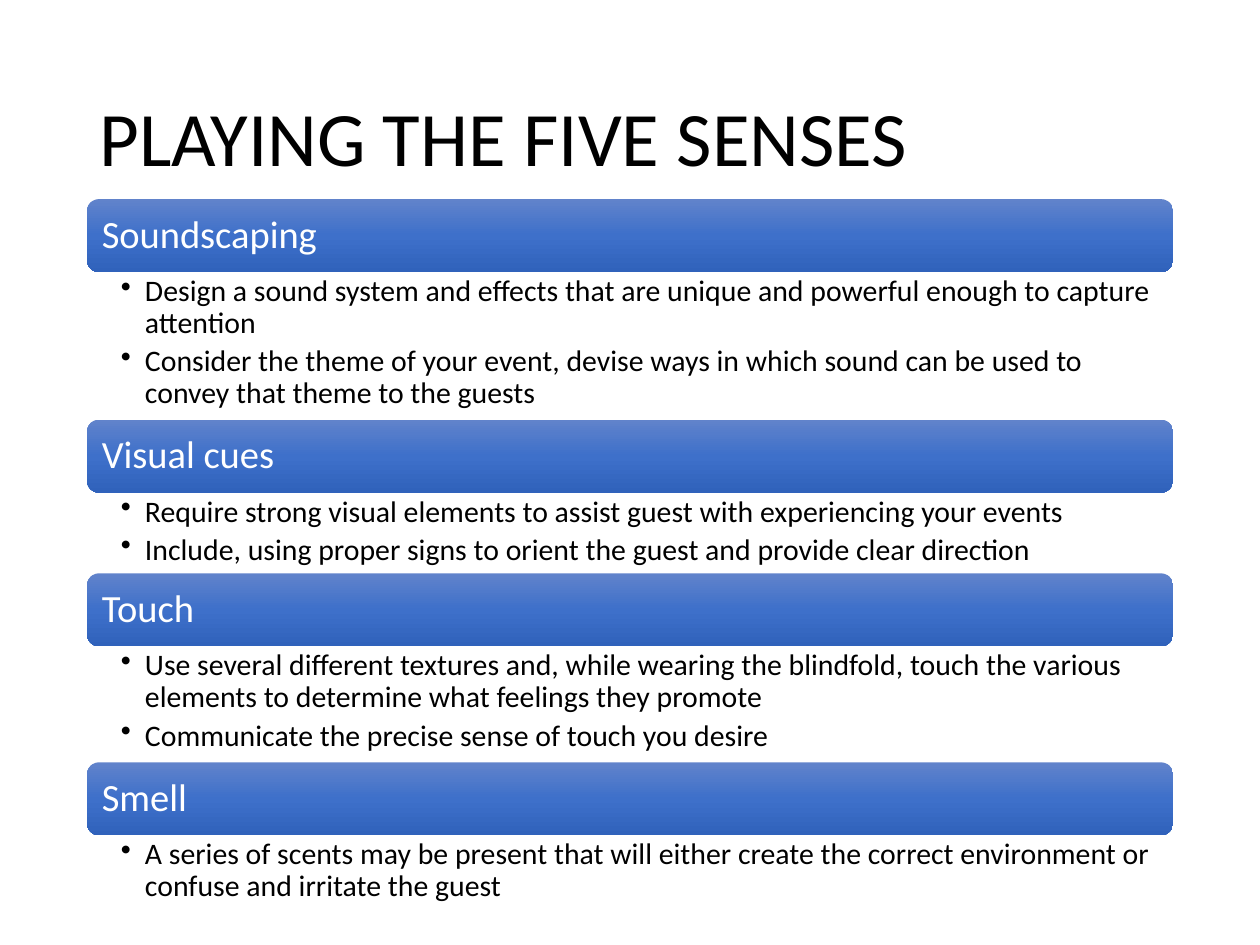
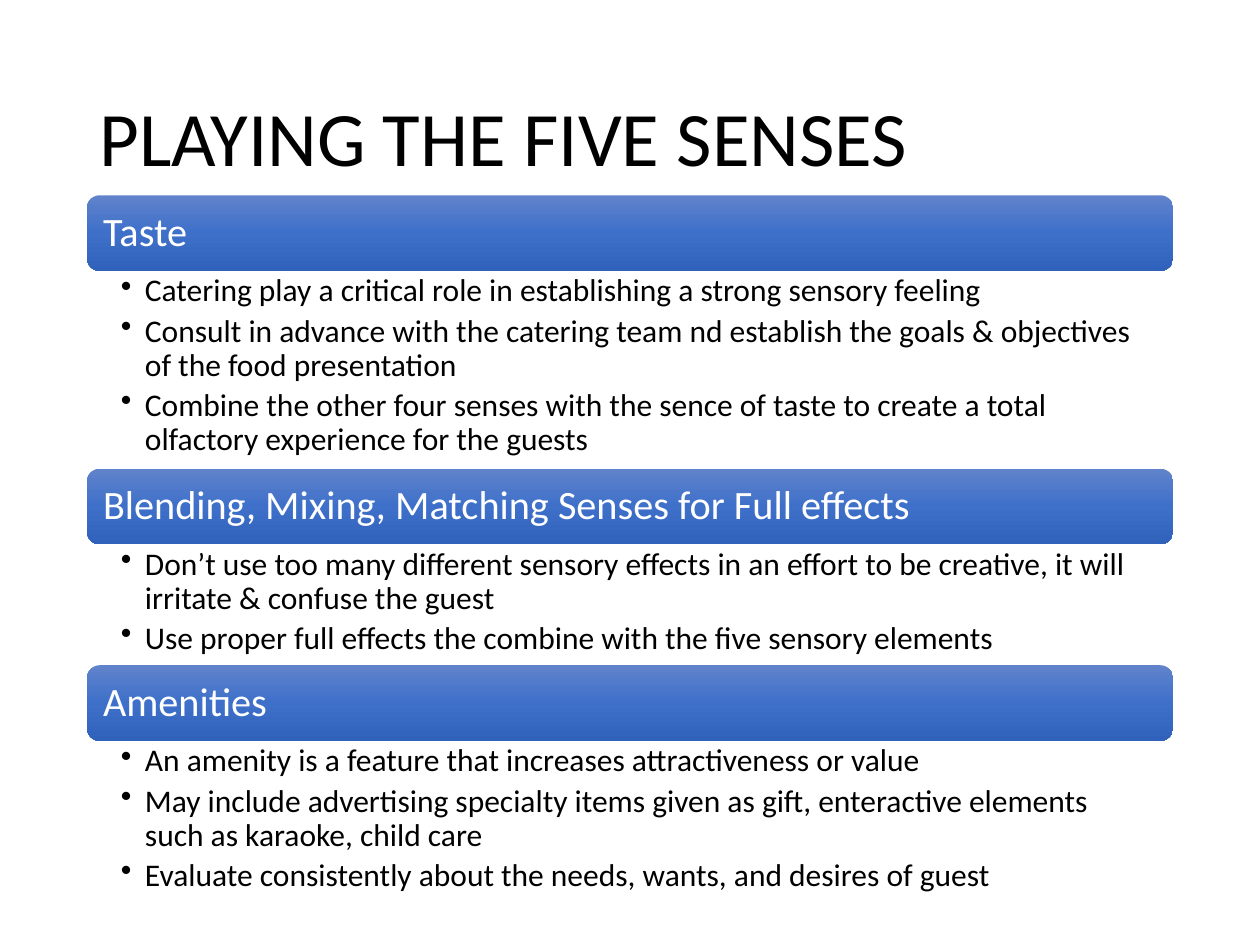
import copy

import pptx
import pptx.dml.color
import pptx.enum.shapes
import pptx.enum.text
import pptx.oxml
import pptx.oxml.ns
import pptx.util

Inches = pptx.util.Inches
Pt = pptx.util.Pt
RGBColor = pptx.dml.color.RGBColor
qn = pptx.oxml.ns.qn

FONT = "Calibri"
BLACK = RGBColor(0x00, 0x00, 0x00)
WHITE = RGBColor(0xFF, 0xFF, 0xFF)
BAND_STOPS = [
    (0.0, RGBColor(0x61, 0x83, 0xCB)),
    (0.5, RGBColor(0x3E, 0x70, 0xCA)),
    (1.0, RGBColor(0x30, 0x62, 0xBB)),
]
LEFT, WIDTH = 0.69, 8.62
BULLET_INDENT = 0.19
TITLE = "PLAYING THE FIVE SENSES"

# Each section: heading, height of its bullet area, bullets
SENSES = [
    ("Soundscaping", 1.17, [
        "Design a sound system and effects that are unique and powerful enough to capture attention",
        "Consider the theme of your event, devise ways in which sound can be used to convey that "
        "theme to the guests",
    ]),
    ("Visual cues", 0.64, [
        "Require strong visual elements to assist guest with experiencing your events",
        "Include, using proper signs to orient the guest and provide clear direction",
    ]),
    ("Touch", 0.92, [
        "Use several different textures and, while wearing the blindfold, touch the various "
        "elements to determine what feelings they promote",
        "Communicate the precise sense of touch you desire",
    ]),
    ("Smell", 0.59, [
        "A series of scents may be present that will either create the correct environment or "
        "confuse and irritate the guest",
    ]),
]
TASTE_AND_EFFECTS = [
    ("Taste", 1.57, [
        "Catering play a critical role in establishing a strong sensory feeling",
        "Consult in advance with the catering team nd establish the goals & objectives of the "
        "food presentation",
        "Combine the other four senses with the sence of taste to create a total olfactory "
        "experience for the guests",
    ]),
    ("Blending, Mixing, Matching Senses for Full effects", 0.96, [
        "Don’t use too many different sensory effects in an effort to be creative, it will "
        "irritate & confuse the guest",
        "Use proper full effects the combine with the five sensory elements",
    ]),
    ("Amenities", 1.3, [
        "An amenity is a feature that increases attractiveness or value",
        "May include advertising specialty items given as gift, enteractive elements such as "
        "karaoke, child care",
        "Evaluate consistently about the needs, wants, and desires of guest",
    ]),
]


def set_frame(frame, anchor, left, top, right, bottom):
    frame.word_wrap = True
    frame.vertical_anchor = anchor
    frame.margin_left, frame.margin_top = Inches(left), Inches(top)
    frame.margin_right, frame.margin_bottom = Inches(right), Inches(bottom)


def write(paragraph, text, size, color):
    paragraph.alignment = pptx.enum.text.PP_ALIGN.LEFT
    paragraph.line_spacing = 0.9
    run = paragraph.add_run()
    run.text = text
    run.font.name = FONT
    run.font.size = Pt(size)
    run.font.color.rgb = color


def add_title(slide):
    title = slide.shapes.title
    title.left, title.top = Inches(LEFT), Inches(0.4)
    title.width, title.height = Inches(WIDTH), Inches(1.45)
    title.text_frame.vertical_anchor = pptx.enum.text.MSO_ANCHOR.MIDDLE
    write(title.text_frame.paragraphs[0], TITLE, 44, BLACK)


def fill_band(band):
    band.fill.gradient()
    band.fill.gradient_angle = 270  # counter-clockwise, so top to bottom
    stop_list = band.fill.gradient_stops
    first_stop = band._element.spPr.find(".//" + qn("a:gs"))
    first_stop.addnext(copy.deepcopy(first_stop))
    stop_list = band.fill.gradient_stops
    for stop, (position, color) in zip(stop_list, BAND_STOPS):
        stop.position = position
        stop.color.rgb = color


def add_band(slide, top, height, heading, size, inset):
    band = slide.shapes.add_shape(
        pptx.enum.shapes.MSO_SHAPE.ROUNDED_RECTANGLE,
        Inches(LEFT), Inches(top), Inches(WIDTH), Inches(height))
    band.shadow.inherit = False
    band.line.fill.background()
    fill_band(band)
    set_frame(band.text_frame, pptx.enum.text.MSO_ANCHOR.MIDDLE, inset, inset, inset, inset)
    write(band.text_frame.paragraphs[0], heading, size, WHITE)


def add_bullets(slide, top, height, bullets, size):
    area = slide.shapes.add_textbox(Inches(LEFT), Inches(top), Inches(WIDTH), Inches(height))
    frame = area.text_frame
    set_frame(frame, pptx.enum.text.MSO_ANCHOR.TOP, 0.27, 0.03, size / 100, 0.03)
    for index, bullet in enumerate(bullets):
        paragraph = frame.add_paragraph() if index else frame.paragraphs[0]
        write(paragraph, bullet, size, BLACK)
        paragraph.level = 1
        paragraph.space_after = Pt(size * 0.2)
        properties = paragraph._p.get_or_add_pPr()
        properties.set("marL", str(Inches(BULLET_INDENT)))
        properties.set("indent", str(-Inches(BULLET_INDENT)))
        mark = properties.makeelement(qn("a:buChar"), {"char": "•"})
        properties.append(mark)


def add_senses_slide(deck, sections, top, band_height, heading_size, bullet_size, inset):
    slide = deck.slides.add_slide(deck.slide_layouts[5])
    add_title(slide)
    # Bands and bullet areas stack without gaps
    for heading, bullets_height, bullets in sections:
        add_band(slide, top, band_height, heading, heading_size, inset)
        top += band_height
        add_bullets(slide, top, bullets_height, bullets, bullet_size)
        top += bullets_height


def main():
    deck = pptx.Presentation()
    deck.slide_width, deck.slide_height = Inches(10), Inches(7.5)
    add_senses_slide(deck, SENSES, 1.58, 0.58, 22, 17, 0.09)
    add_senses_slide(deck, TASTE_AND_EFFECTS, 1.55, 0.6, 23, 18, 0.1)
    deck.save("out.pptx")


if __name__ == "__main__":
    main()
